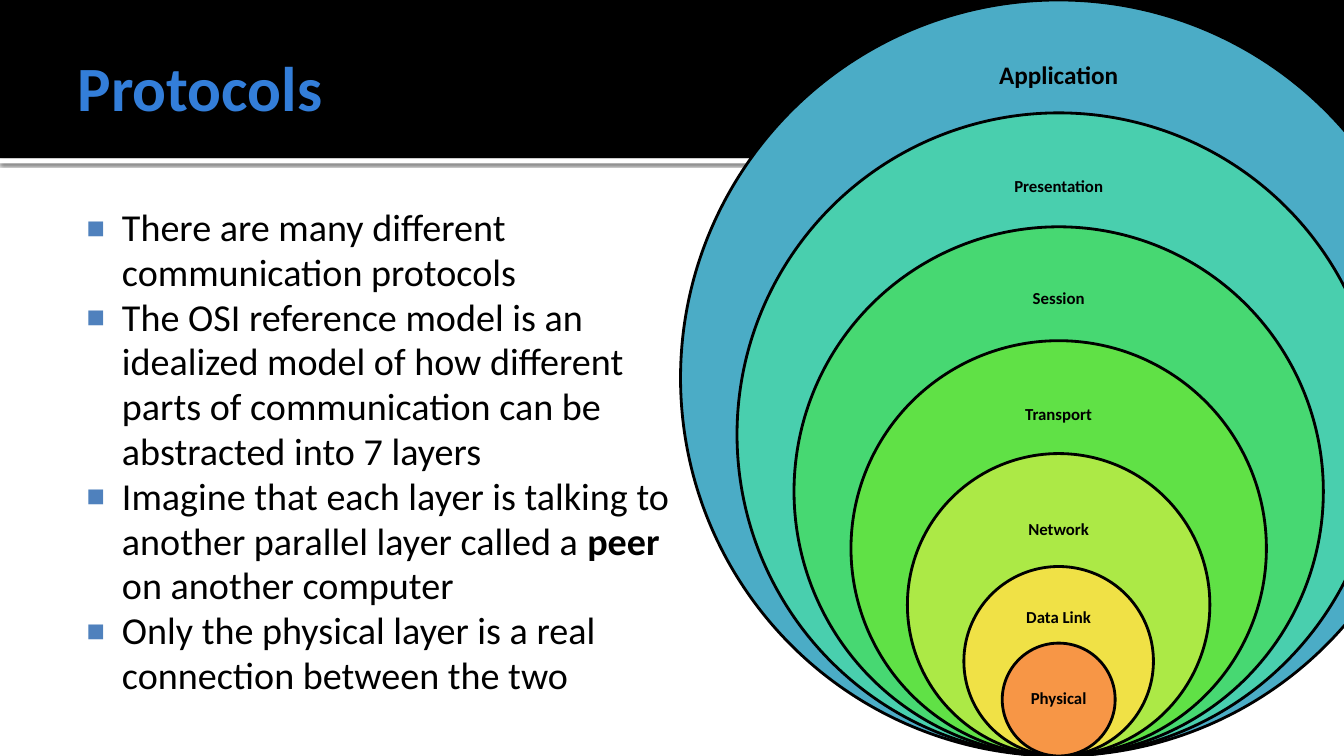
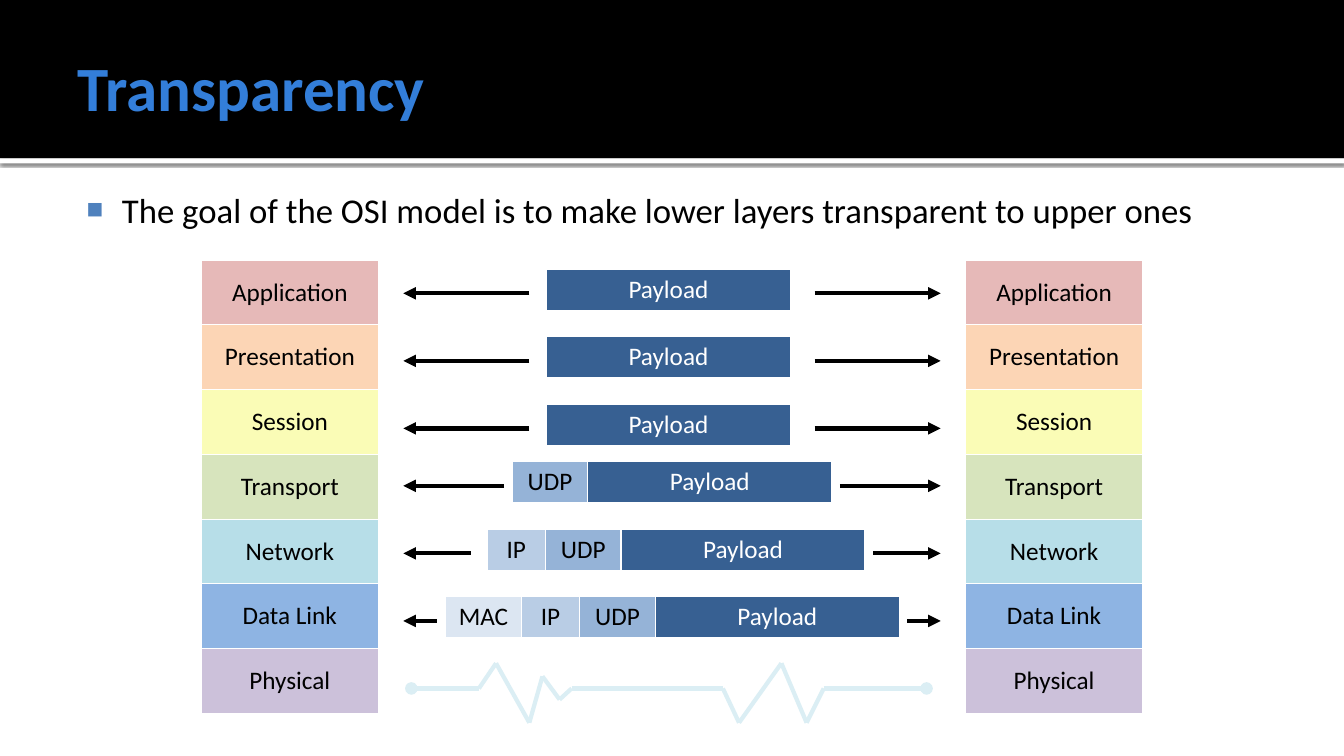
"""Build two slides on network protocols and the OSI layers."""
import dataclasses
import itertools

import pptx
import pptx.dml.color
import pptx.enum.shapes
import pptx.enum.text
import pptx.oxml
import pptx.oxml.ns
import pptx.util

Inches = pptx.util.Inches
Pt = pptx.util.Pt
qn = pptx.oxml.ns.qn
MSO_SHAPE = pptx.enum.shapes.MSO_SHAPE
ANCHOR = pptx.enum.text.MSO_ANCHOR
ALIGN = pptx.enum.text.PP_ALIGN
NS = 'xmlns:a="http://schemas.openxmlformats.org/drawingml/2006/main"'


@dataclasses.dataclass(frozen=True)
class Theme:
    """Shared colours, font and type sizes."""
    font: str = "Calibri"
    ink: str = "000000"
    paper: str = "FFFFFF"
    title: str = "337ED9"
    bullet: str = "4F81BD"
    pulse: str = "DBEEF4"
    title_size: float = 45
    list_size: float = 27.2
    lead_size: float = 24.8
    label_size: float = 18
    small_size: float = 12


THEME = Theme()
WIDTH, HEIGHT = 13.33, 7.5
BAND_HEIGHT = 1.57

PROTOCOL_POINTS = [
    [("There are many different communication protocols", False)],
    [("The OSI reference model is an idealized model of how different parts of "
      "communication can be abstracted into 7 layers", False)],
    [("Imagine that each layer is talking to another parallel layer called a ", False),
     ("peer", True), (" on another computer", False)],
    [("Only the physical layer is a real connection between the two", False)],
]
TRANSPARENCY_POINTS = [
    [("The goal of the OSI model is to make lower layers transparent to upper ones", False)],
]

LAYERS = ["Application", "Presentation", "Session", "Transport",
          "Network", "Data Link", "Physical"]
CIRCLE_CENTER = 10.5
CIRCLE_COLORS = ["4BACC6", "49CFAE", "47D872", "60E146", "ACE946", "F0E146", "F79646"]
CIRCLE_DIAMETERS = [7.5, 6.38, 5.25, 4.12, 3, 1.88, 1.12]
CIRCLE_LABELS = [(0.38, 2.81, 0.75), (1.49, 2.75, 0.73), (2.61, 2.72, 0.72),
                 (3.75, 2.23, 0.74), (4.88, 1.95, 0.75), (5.91, 1.27, 0.45),
                 (6.66, 0.8, 0.56)]

STACK_COLORS = ["E6B9B8", "FCD5B5", "FAFCB6", "D7E4BD", "B7DEE8", "8EB4E3", "CCC1DA"]
STACK_LEFTS = [2, 9.58]
STACK_TOP, STACK_WIDTH, STACK_HEIGHT = 2.58, 1.75, 4.5
PACKET = [("MAC", "DCE6F2", THEME.ink, 0.75), ("IP", "B9CDE5", THEME.ink, 0.58),
          ("UDP", "95B3D7", THEME.ink, 0.75), ("Payload", "376092", THEME.paper, 2.42)]
PACKET_HEIGHT = 0.41
PACKET_ROWS = [(1, 5.42, 2.67, 5.25), (1, 5.42, 3.34, 5.25), (1, 5.42, 4.01, 5.25),
               (2, 5.08, 4.58, 5), (3, 4.83, 5.25, 4.67), (4, 4.42, 5.92, 4.33)]
ARROW_DROP, ARROW_TIP = 0.24, 4
PULSE = [(4.08, 6.83), (4.75, 6.83), (4.92, 6.58), (5.25, 7.17), (5.38, 6.71),
         (5.55, 6.94), (5.67, 6.83), (7.17, 6.83), (7.33, 7.17), (7.75, 6.58),
         (8, 7.17), (8.17, 6.83), (9.19, 6.83)]


def rgb(color):
    """Return a colour object for a hex string."""
    return pptx.dml.color.RGBColor.from_string(color)


def xml(text):
    """Return a drawing element parsed from text."""
    return pptx.oxml.parse_xml(text.replace(" ", f" {NS} ", 1))


def box(left, top, width, height):
    """Return a position and size in inches as lengths."""
    return [Inches(v) for v in (left, top, width, height)]


def add_text(p, text, size=THEME.label_size, color=THEME.ink, bold=False, align=None):
    """Add a formatted run to a paragraph."""
    if align is not None:
        p.alignment = align
    r = p.add_run()
    r.text = text
    r.font.name = THEME.font
    r.font.size = Pt(size)
    r.font.bold = bold
    r.font.color.rgb = rgb(color)


def set_frame(tf, insets, anchor=ANCHOR.TOP):
    """Set wrapping, insets and anchor of a text frame."""
    tf.word_wrap = True
    tf.auto_size = pptx.enum.text.MSO_AUTO_SIZE.NONE
    tf.vertical_anchor = anchor
    (tf.margin_left, tf.margin_top,
     tf.margin_right, tf.margin_bottom) = [Inches(v) for v in insets]


def place(sp, bounds):
    """Move a placeholder to the given bounds."""
    sp.left, sp.top, sp.width, sp.height = box(*bounds)


def add_filled(shapes, kind, bounds, color, line=None):
    """Add a preset shape with a solid fill and an optional outline."""
    sp = shapes.add_shape(kind, *box(*bounds))
    sp.shadow.inherit = False
    sp.fill.solid()
    sp.fill.fore_color.rgb = rgb(color)
    if line is None:
        sp.line.fill.background()
    else:
        sp.line.color.rgb = rgb(THEME.ink)
        sp.line.width = Pt(line)
    return sp


def add_line(shapes, start, end, color=THEME.ink, head=None, tail=None):
    """Add a thick straight line with optional end marks."""
    cx = shapes.add_connector(pptx.enum.shapes.MSO_CONNECTOR.STRAIGHT,
                              *[Inches(v) for v in (*start, *end)])
    cx.line.color.rgb = rgb(color)
    cx.line.width = Pt(3)
    ln = cx.element.spPr.find(qn("a:ln"))
    for tag, mark in (("headEnd", head), ("tailEnd", tail)):
        if mark:
            ln.append(xml(f'<a:{tag} type="{mark}"/>'))
    cx.element.spPr.append(xml("<a:effectLst />"))


def add_table(shapes, left, top, widths, height, rows):
    """Add a table from rows of (text, fill, text colour) cells."""
    frame = shapes.add_table(len(rows), len(widths),
                             *box(left, top, sum(widths), height))
    table = frame.table
    table.first_row = table.horz_banding = False
    for column, width in zip(table.columns, widths):
        column.width = Inches(width)
    for i, row in enumerate(rows):
        for j, (text, fill, color) in enumerate(row):
            cell = table.cell(i, j)
            if len(rows) > 1:
                cell.vertical_anchor = ANCHOR.MIDDLE
            add_text(cell.text_frame.paragraphs[0], text, color=color, align=ALIGN.CENTER)
            tcPr = cell._tc.get_or_add_tcPr()
            for side in ("lnL", "lnR", "lnT", "lnB"):
                tcPr.append(xml(f'<a:{side} w="{Pt(1)}"><a:solidFill><a:srgbClr '
                                f'val="{THEME.paper}"/></a:solidFill></a:{side}>'))
            cell.fill.solid()
            cell.fill.fore_color.rgb = rgb(fill)


def add_bands(prs, slide):
    """Put the header band and its shadowed edge on the slide master."""
    band = add_filled(slide.shapes, MSO_SHAPE.RECTANGLE,
                      (0, 0, WIDTH, BAND_HEIGHT), THEME.ink)
    edge = add_filled(slide.shapes, MSO_SHAPE.RECTANGLE,
                      (0, BAND_HEIGHT, WIDTH, 0.05), THEME.paper)
    edge.element.spPr.find(qn("a:effectLst")).append(xml(
        f'<a:outerShdw blurRad="{Pt(2.5)}" dist="{Pt(0.8)}" dir="5400000" '
        f'rotWithShape="0"><a:srgbClr val="{THEME.ink}"><a:alpha val="60000"/>'
        '</a:srgbClr></a:outerShdw>'))
    for sp in (band, edge):
        prs.slide_master.shapes._spTree.insert(2, sp.element)


def add_bullets(sp, points, size, line_spacing):
    """Fill a body placeholder with square-bulleted paragraphs."""
    tf = sp.text_frame
    set_frame(tf, (0.06, 0.1, 0.1, 0.05))
    for i, runs in enumerate(points):
        p = tf.add_paragraph() if i else tf.paragraphs[0]
        p.line_spacing = line_spacing
        p.space_before = Pt(0)
        pPr = p._p.get_or_add_pPr()
        pPr.set("marL", str(Inches(0.48)))
        pPr.set("indent", str(Inches(-0.35)))
        for mark in (f'<a:buClr ><a:srgbClr val="{THEME.bullet}"/></a:buClr>',
                     '<a:buSzPct val="80000"/>', '<a:buChar char="■"/>'):
            pPr.append(xml(mark))
        for text, bold in runs:
            add_text(p, text, size=size, bold=bold)


def add_slide(prs, title, points, bounds, size, line_spacing=1.0):
    """Add a slide with a title and a bulleted body."""
    slide = prs.slides.add_slide(prs.slide_layouts[1])
    sp = slide.shapes.title
    place(sp, (0.67, 0.17, 12, 1.37))
    set_frame(sp.text_frame, (0.1, 0.05, 0.05, 0.05), ANCHOR.MIDDLE)
    add_text(sp.text_frame.paragraphs[0], title, size=THEME.title_size,
             color=THEME.title, bold=True, align=ALIGN.LEFT)
    body = slide.placeholders[1]
    place(body, bounds)
    add_bullets(body, points, size, line_spacing)
    return slide


def add_circles(slide):
    """Draw the nested layer circles, all resting on the slide's bottom edge."""
    shapes = slide.shapes.add_group_shape().shapes
    for i, (name, color, d, (top, width, height)) in enumerate(
            zip(LAYERS, CIRCLE_COLORS, CIRCLE_DIAMETERS, CIRCLE_LABELS)):
        add_filled(shapes, MSO_SHAPE.OVAL,
                   (CIRCLE_CENTER - d / 2, HEIGHT - d, d, d), color, line=2)
        tb = shapes.add_textbox(*box(CIRCLE_CENTER - width / 2, top, width, height))
        set_frame(tb.text_frame, [0.09 if i else 0.14] * 4, ANCHOR.MIDDLE)
        p = tb.text_frame.paragraphs[0]
        p.line_spacing = 0.9
        add_text(p, name, size=THEME.small_size if i else THEME.label_size,
                 bold=True, align=ALIGN.CENTER)


def add_stacks(slide):
    """Draw the two facing stacks of layers."""
    rows = [[(name, fill, THEME.ink)] for name, fill in zip(LAYERS, STACK_COLORS)]
    for left in STACK_LEFTS:
        add_table(slide.shapes, left, STACK_TOP, [STACK_WIDTH], STACK_HEIGHT, rows)


def add_packets(slide):
    """Draw each layer's packet with an arrow towards both stacks."""
    for count, left, top, start in PACKET_ROWS:
        parts = PACKET[-count:]
        add_table(slide.shapes, left, top, [part[3] for part in parts],
                  PACKET_HEIGHT, [[part[:3] for part in parts]])
        y = top + ARROW_DROP
        for x, tip in ((start, ARROW_TIP), (WIDTH - start, WIDTH - ARROW_TIP)):
            add_line(slide.shapes, (x, y), (tip, y), tail="triangle")


def add_pulse(slide):
    """Draw the physical signal as a line with round ends."""
    shapes = slide.shapes.add_group_shape().shapes
    for start, end in itertools.pairwise(PULSE):
        add_line(shapes, start, end, THEME.pulse,
                 head="oval" if start == PULSE[0] else None,
                 tail="oval" if end == PULSE[-1] else None)


def main():
    """Build and save the presentation."""
    prs = pptx.Presentation()
    prs.slide_width, prs.slide_height = Inches(WIDTH), Inches(HEIGHT)
    protocols = add_slide(prs, "Protocols", PROTOCOL_POINTS,
                          (0.67, 1.94, 6.08, 5.06), THEME.list_size, 0.98)
    add_bands(prs, protocols)
    add_circles(protocols)
    transparency = add_slide(prs, "Transparency", TRANSPARENCY_POINTS,
                             (0.67, 1.77, 12, 0.81), THEME.lead_size)
    add_stacks(transparency)
    add_packets(transparency)
    add_pulse(transparency)
    prs.save("out.pptx")


if __name__ == "__main__":
    main()
